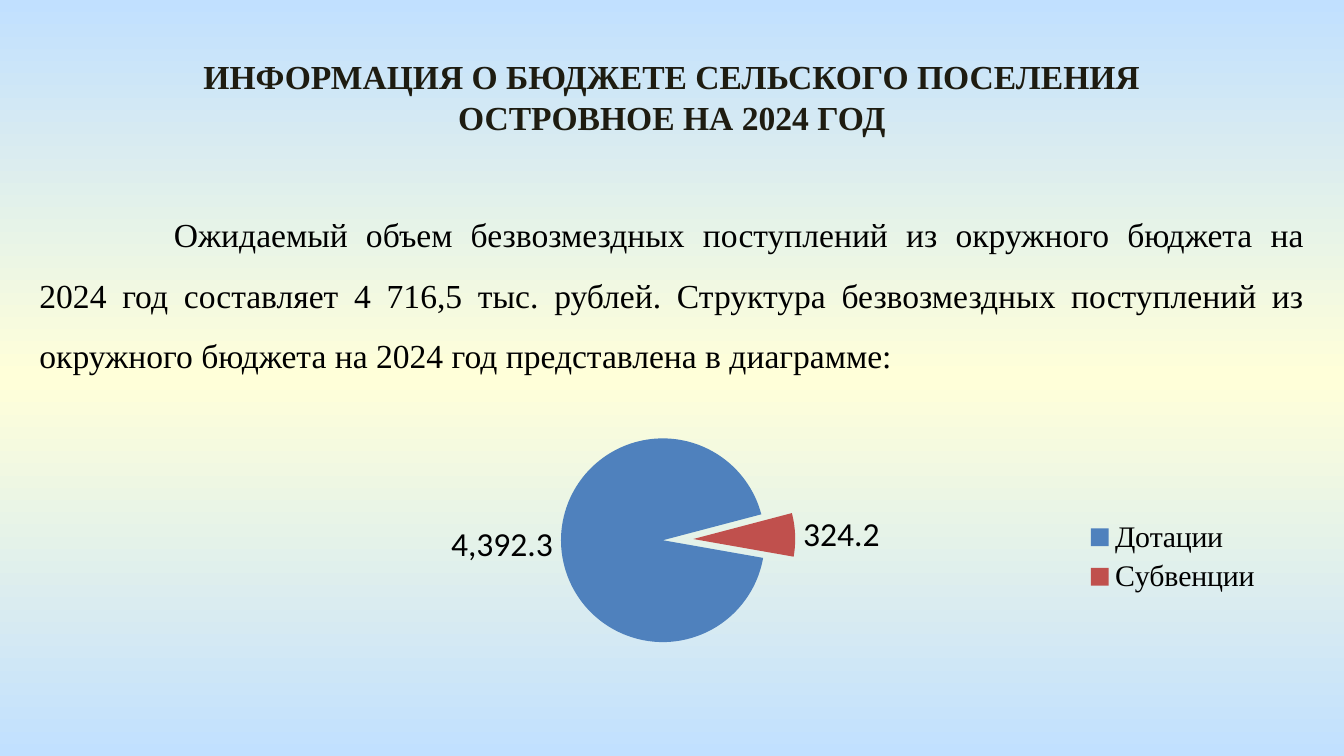
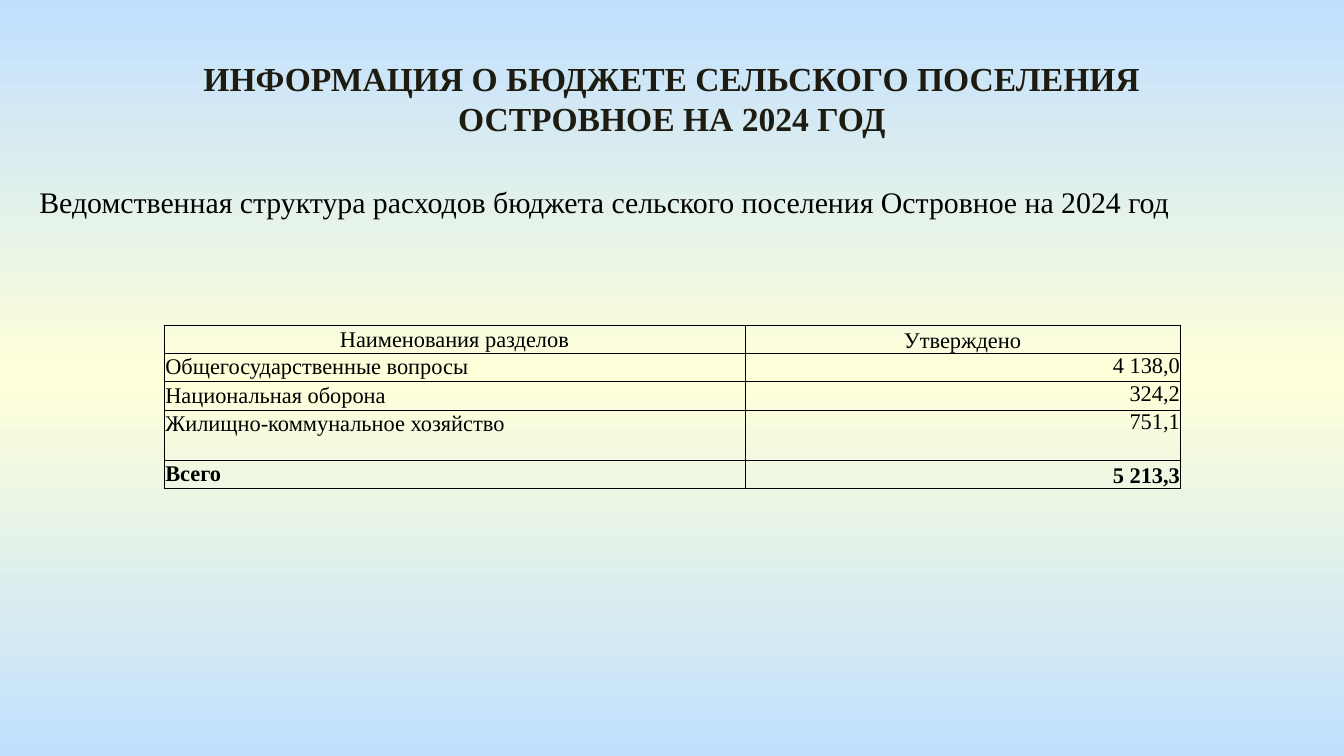
from copy import deepcopy
from dataclasses import dataclass
from typing import Any

from lxml import etree
from pptx import Presentation
from pptx import util as u
from pptx.chart.data import CategoryChartData
from pptx.dml.color import RGBColor
from pptx.enum import chart as ch
from pptx.enum import text as t
from pptx.oxml.ns import qn

PX = 4572  # EMU in one px, 200 px to the inch
SERIF, SANS = "Times New Roman", "Calibri"
HUES = {"sky": "C1E0FF", "cream": "FFFFD9", "title": "1E1C11",
        "ink": "000000", "blue": "4F81BD", "red": "C0504D"}
HEAD = "ИНФОРМАЦИЯ О БЮДЖЕТЕ СЕЛЬСКОГО ПОСЕЛЕНИЯ ОСТРОВНОЕ НА 2024 ГОД"
INTRO = ("Ожидаемый объем безвозмездных поступлений из окружного бюджета "
         "на 2024 год составляет 4 716,5 тыс. рублей. Структура безвозмездных "
         "поступлений из окружного бюджета на 2024 год представлена в диаграмме:")
LEAD = ("Ведомственная структура расходов бюджета сельского поселения "
        "Островное на 2024 год")


@dataclass(frozen=True)
class Box:
    x: int
    y: int
    w: int
    h: int

    def emu(self) -> tuple[int, ...]:
        return tuple(n * PX for n in (self.x, self.y, self.w, self.h))


@dataclass(frozen=True)
class Style:
    size: int
    hue: str = "ink"
    bold: bool = False
    face: str = SERIF


@dataclass(frozen=True)
class Row:
    name: str
    sum: str
    h: int
    bold: bool = False


ROWS = [
    Row("Наименования разделов", "Утверждено", 38),
    Row("Общегосударственные вопросы", "4 138,0", 39),
    Row("Национальная оборона", "324,2", 38),
    Row("Жилищно-коммунальное хозяйство", "751,1", 75),
    Row("Всего", "5 213,3", 38, True),
]
PARTS = [("Дотации", 4392.3, "blue"), ("Субвенции", 324.2, "red")]


def rgb(hue: str) -> RGBColor:
    return RGBColor.from_string(HUES[hue])


def set_font(font: Any, style: Style) -> None:
    font.name, font.size, font.bold = style.face, u.Pt(style.size), style.bold
    font.color.rgb = rgb(style.hue)


def write(par: Any, words: str, style: Style, align: Any) -> None:
    par.alignment = align
    run = par.add_run()
    run.text = words
    set_font(run.font, style)


def add_text(slide: Any, box: Box, words: str, style: Style, align: Any) -> Any:
    frame = slide.shapes.add_textbox(*box.emu()).text_frame
    frame.word_wrap = True
    par = frame.paragraphs[0]
    write(par, words, style, align)
    return par


def paint(slide: Any) -> None:
    """Fill the background with a sky, cream, sky gradient from top to bottom."""
    fill = slide.background.fill
    fill.gradient()
    fill.gradient_angle = 270
    stops = slide.element.find(".//" + qn("a:gsLst"))
    stops.append(deepcopy(stops[0]))
    for stop, hue, place in zip(fill.gradient_stops, ("sky", "cream", "sky"), (0, 0.5, 1)):
        stop.color.rgb = rgb(hue)
        stop.position = place


def add_page(deck: Any, top: int) -> Any:
    slide = deck.slides.add_slide(deck.slide_layouts[6])
    paint(slide)
    add_text(slide, Box(227, top, 1546, 142), HEAD, Style(18, "title", True),
             t.PP_ALIGN.CENTER)
    return slide


def place_plot(chart: Any, **share: float) -> None:
    """Fix the inner plot area, in percent of the chart."""
    area = chart.element.find(".//" + qn("c:plotArea"))
    for old in area.findall(qn("c:layout")):
        area.remove(old)
    layout = etree.Element(qn("c:layout"))
    area.insert(0, layout)
    manual = etree.SubElement(layout, qn("c:manualLayout"))
    marks = {"layoutTarget": "inner", "xMode": "edge", "yMode": "edge"}
    marks.update((tag, f"{val / 100:.3f}") for tag, val in share.items())
    for tag, val in marks.items():
        etree.SubElement(manual, qn("c:" + tag)).set("val", val)


def turn_pie(chart: Any, angle: int, gap: int) -> None:
    """Set the start angle and pull the slices apart."""
    pie = chart.element.find(".//" + qn("c:pieChart"))
    first = pie.find(qn("c:firstSliceAng"))
    if first is None:
        first = etree.SubElement(pie, qn("c:firstSliceAng"))
    first.set("val", str(angle))
    burst = etree.Element(qn("c:explosion"))
    burst.set("val", str(gap))
    pie.find(qn("c:ser")).find(qn("c:tx")).addnext(burst)


def add_pie(slide: Any, box: Box) -> None:
    data = CategoryChartData(number_format="#,##0.0")
    data.categories = [name for name, _, _ in PARTS]
    data.add_series("Series 1", [val for _, val, _ in PARTS])
    chart = slide.shapes.add_chart(ch.XL_CHART_TYPE.PIE, *box.emu(), data).chart
    chart.has_title = False
    set_font(chart.font, Style(18, face=SANS))
    chart.has_legend = True
    chart.legend.position = ch.XL_LEGEND_POSITION.RIGHT
    chart.legend.include_in_layout = False
    set_font(chart.legend.font, Style(16))
    place_plot(chart, x=39.3, y=16.3, w=23.3, h=58.7)
    turn_pie(chart, 100, 15)
    plot = chart.plots[0]
    plot.vary_by_categories = True
    series = plot.series[0]
    for i, (_, _, hue) in enumerate(PARTS):
        fill = series.points[i].format.fill
        fill.solid()
        fill.fore_color.rgb = rgb(hue)
    tags = series.data_labels
    tags.show_value = True
    tags.number_format, tags.number_format_is_linked = "#,##0.0", False
    tags.position = ch.XL_LABEL_POSITION.OUTSIDE_END
    set_font(tags.font, Style(18, face=SANS))


def frame_cell(cell: Any) -> None:
    """Clear the fill and draw a thin line on all four sides."""
    cell.fill.background()
    props = cell._tc.get_or_add_tcPr()
    for i, side in enumerate("LRTB"):
        line = etree.Element(qn("a:ln" + side), w=str(u.Pt(0.5)))
        fill = etree.SubElement(line, qn("a:solidFill"))
        etree.SubElement(fill, qn("a:srgbClr"), val=HUES["ink"])
        props.insert(i, line)


def add_grid(slide: Any, box: Box, widths: tuple[int, ...]) -> None:
    table = slide.shapes.add_table(len(ROWS), len(widths), *box.emu()).table
    table.first_row = table.horz_banding = False
    for col, width in zip(table.columns, widths):
        col.width = width * PX
    mid, low, top = t.MSO_ANCHOR.MIDDLE, t.MSO_ANCHOR.BOTTOM, t.MSO_ANCHOR.TOP
    for i, row in enumerate(ROWS):
        table.rows[i].height = row.h * PX
        head, last = i == 0, i == len(ROWS) - 1
        for j, words in enumerate((row.name, row.sum)):
            cell = table.cell(i, j)
            pad = 2 * PX if head or j == 0 else 0
            cell.margin_left = cell.margin_right = cell.margin_top = pad
            cell.margin_bottom = 0
            if j:
                cell.vertical_anchor = low if head or last else top
            else:
                cell.vertical_anchor = mid if head else top
            side = t.PP_ALIGN.RIGHT if j else t.PP_ALIGN.LEFT
            write(cell.text_frame.paragraphs[0], words, Style(12, bold=row.bold),
                  t.PP_ALIGN.CENTER if head else side)
            frame_cell(cell)


def main() -> None:
    deck = Presentation()
    deck.slide_width, deck.slide_height = 2000 * PX, 1125 * PX

    income = add_page(deck, 74)
    par = add_text(income, Box(39, 279, 1922, 292), INTRO, Style(18), t.PP_ALIGN.JUSTIFY)
    par.line_spacing = 1.5
    par._p.get_or_add_pPr().set("indent", str(200 * PX))
    add_pie(income, Box(86, 532, 1812, 594))

    costs = add_page(deck, 76)
    add_text(costs, Box(39, 264, 1922, 128), LEAD, Style(16), t.PP_ALIGN.JUSTIFY)
    add_grid(costs, Box(244, 484, 1512, 240), (865, 647))

    deck.save("out.pptx")


if __name__ == "__main__":
    main()
